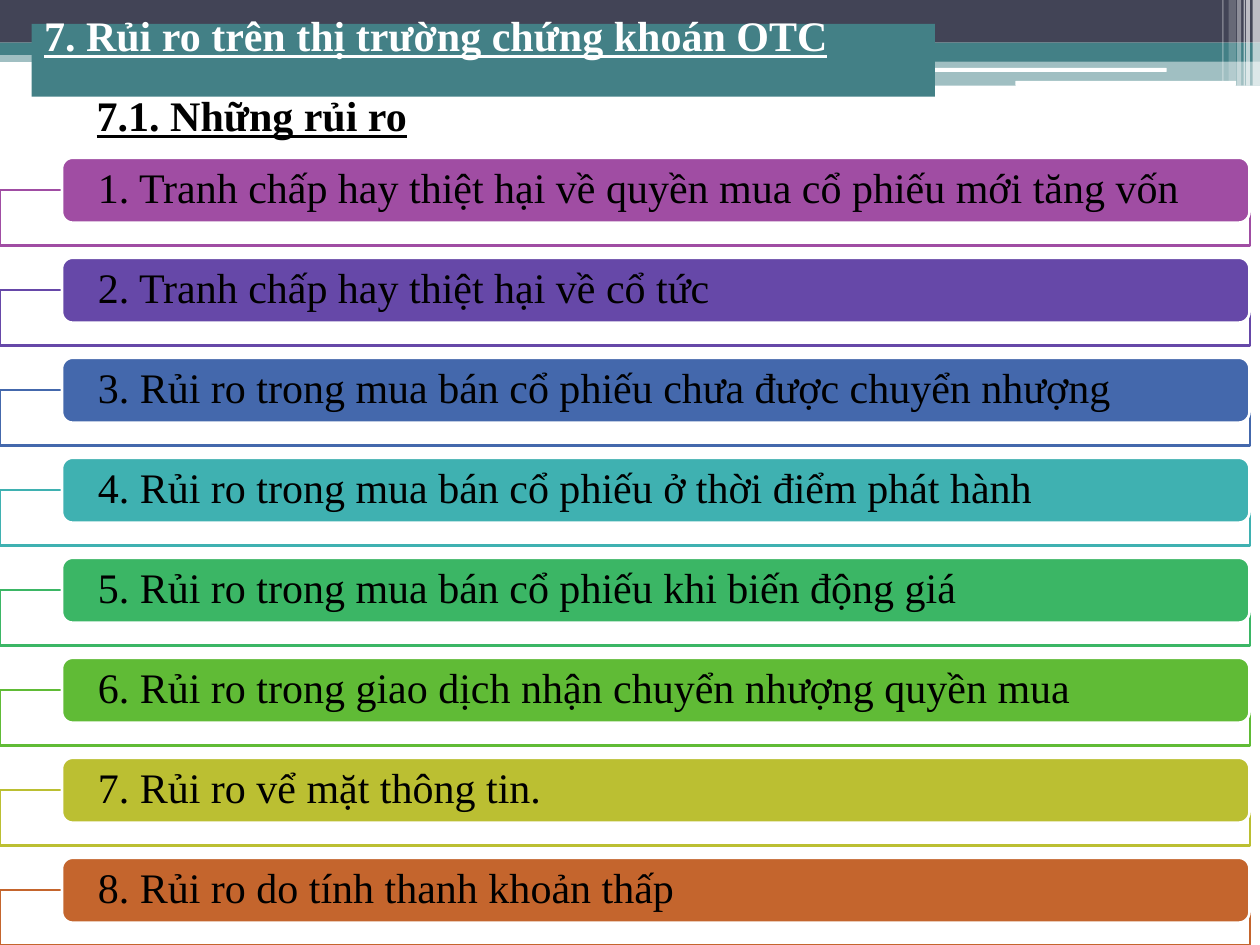
from lxml import etree
from pptx import Presentation
from pptx.dml.color import RGBColor
from pptx.enum.shapes import MSO_SHAPE
from pptx.enum.text import MSO_ANCHOR, PP_ALIGN
from pptx.oxml.ns import qn
from pptx.util import Cm, Pt

RECTANGLE = MSO_SHAPE.RECTANGLE
ROUNDED = MSO_SHAPE.ROUNDED_RECTANGLE
MIDDLE = MSO_ANCHOR.MIDDLE
LEFT = PP_ALIGN.LEFT

WHITE = RGBColor(0xFF, 0xFF, 0xFF)
BLACK = RGBColor(0, 0, 0)
SLATE = RGBColor(0x42, 0x44, 0x56)
TEAL = RGBColor(0x43, 0x80, 0x86)

BANDS = [
    (0, 1.02, 25.4, 0.23, TEAL, 50),
    (0, 0, 25.4, 0.86, SLATE, 100),
    (0, 0.86, 25.4, 0.25, TEAL, 100),
    (15.04, 0.99, 10.36, 0.25, TEAL, 100),
    (15.04, 1.22, 10.36, 0.51, TEAL, 50),
]
PILLS = [(15.01, 1.37, 8.51, 0.08), (20.47, 1.63, 4.45, 0.1)]
STRIPES = [
    (25.25, 0.15, 1.73, 65),
    (25.12, 0.08, 1.73, 65),
    (25.07, 0.03, 1.73, 60),
    (24.94, 0.08, 1.73, 40),
    (24.77, 0.15, 1.63, 20),
    (24.64, 0.03, 1.63, 30),
]
RISKS = [
    ("1. Tranh chấp hay thiệt hại về quyền mua cổ phiếu mới tăng vốn", RGBColor(0xA0, 0x4D, 0xA3)),
    ("2. Tranh chấp hay thiệt hại về cổ tức", RGBColor(0x66, 0x48, 0xA8)),
    ("3. Rủi ro trong mua bán cổ phiếu chưa được chuyển nhượng", RGBColor(0x44, 0x68, 0xAC)),
    ("4. Rủi ro trong mua bán cổ phiếu ở thời điểm phát hành", RGBColor(0x3F, 0xB1, 0xB1)),
    ("5. Rủi ro trong mua bán cổ phiếu khi biến động giá", RGBColor(0x3B, 0xB6, 0x65)),
    ("6. Rủi ro trong giao dịch nhận chuyển nhượng quyền mua", RGBColor(0x60, 0xBB, 0x36)),
    ("7. Rủi ro vể mặt thông tin.", RGBColor(0xBB, 0xBF, 0x32)),
    ("8. Rủi ro do tính thanh khoản thấp", RGBColor(0xC4, 0x65, 0x2D)),
]
FIRST_BAR_TOP = 3.18
FRAME_DROP = 0.65
PITCH = 2.016


def add_box(page, kind, left, top, width, height, fill, opacity=100, line=None):
    """Add a filled shape, placed in centimetres, with an optional outline."""
    box = page.shapes.add_shape(kind, Cm(left), Cm(top), Cm(width), Cm(height))
    box.shadow.inherit = False
    box.fill.solid()
    box.fill.fore_color.rgb = fill
    if opacity < 100:
        color = box.fill._xPr.find(qn("a:solidFill"))[0]
        etree.SubElement(color, qn("a:alpha")).set("val", str(opacity * 1000))
    if line is None:
        box.line.fill.background()
    else:
        box.line.color.rgb = line
        box.line.width = Pt(1.5)
    return box


def write(box, text, color, heading=False):
    """Write one left-aligned, vertically centred paragraph into a box."""
    frame = box.text_frame
    frame.word_wrap = True
    frame.vertical_anchor = MIDDLE
    para = frame.paragraphs[0]
    para.text = text
    para.alignment = LEFT
    font = para.font
    font.name = "Times New Roman"
    font.size = Pt(24)
    font.color.rgb = color
    font.bold = heading
    font.underline = heading
    return frame


def add_header(page):
    """Draw the coloured bands, white pills and stripes along the top edge."""
    for left, top, width, height, color, opacity in BANDS:
        add_box(page, RECTANGLE, left, top, width, height, color, opacity)
    for left, top, width, height in PILLS:
        add_box(page, ROUNDED, left, top, width, height, WHITE)
    for left, width, height, opacity in STRIPES:
        add_box(page, RECTANGLE, left, 0, width, height, WHITE, opacity)


def add_risk(page, top, text, color):
    """Draw one risk: an outlined frame with a labelled bar on top of it."""
    add_box(page, RECTANGLE, 0, top + FRAME_DROP, 25.2, 1.12, WHITE, 90, color)
    bar = add_box(page, ROUNDED, 1.25, top, 23.94, 1.31, color, line=WHITE)
    frame = write(bar, text, BLACK)
    frame.margin_left = frame.margin_right = Cm(0.66)
    frame.margin_top = frame.margin_bottom = 0
    frame.paragraphs[0].line_spacing = 0.9


def main():
    """Build the slide and save it."""
    deck = Presentation()
    deck.slide_width, deck.slide_height = Cm(25.4), Cm(19.05)
    page = deck.slides.add_slide(deck.slide_layouts[6])
    add_header(page)
    subtitle = add_box(page, RECTANGLE, 1.7, 1.47, 9.09, 1.7, WHITE)
    write(subtitle, "7.1. Những rủi ro", BLACK, heading=True)
    for index, (text, color) in enumerate(RISKS):
        add_risk(page, FIRST_BAR_TOP + index * PITCH, text, color)
    title = add_box(page, RECTANGLE, 0.64, 0.48, 18.21, 1.47, TEAL)
    write(title, "7. Rủi ro trên thị trường chứng khoán OTC\v", WHITE, heading=True)
    deck.save("out.pptx")


if __name__ == "__main__":
    main()
